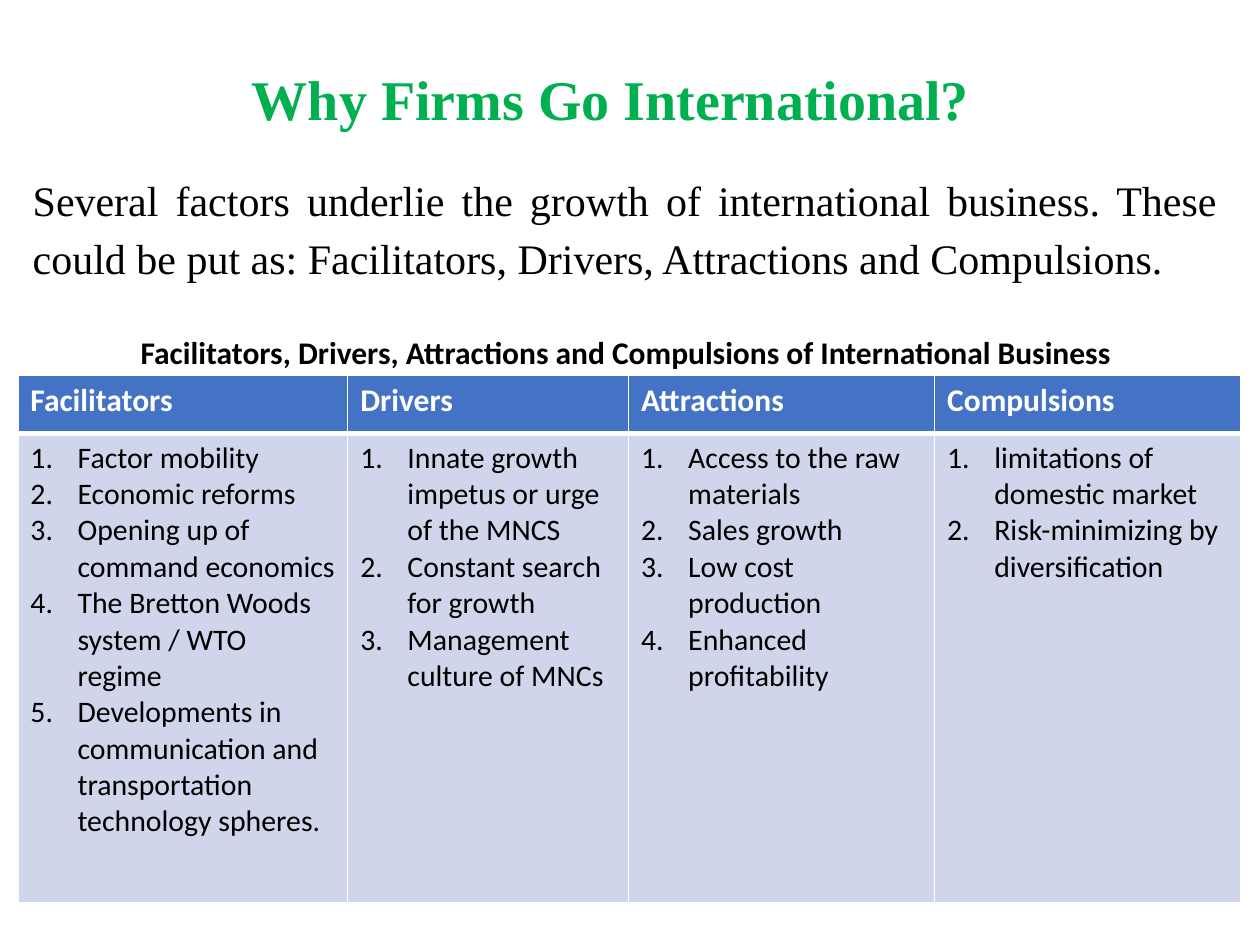
import pptx
import pptx.util
import pptx.dml.color
import pptx.enum.text
import pptx.oxml
import pptx.oxml.ns

Cm = pptx.util.Cm
Pt = pptx.util.Pt
ALIGN = pptx.enum.text.PP_ALIGN
SERIF = "Times New Roman"
SANS = "Calibri"
HUES = {
    "title": "00B050",
    "text": "000000",
    "head": "4472C4",
    "body": "CFD5EA",
    "white": "FFFFFF",
}
LISTS = {
    "Facilitators": [
        "Factor mobility",
        "Economic reforms",
        "Opening up of command economics",
        "The Bretton Woods system / WTO regime",
        "Developments in communication and transportation technology spheres.",
    ],
    "Drivers": [
        "Innate growth impetus or urge of the MNCS",
        "Constant search for growth",
        "Management culture of MNCs",
    ],
    "Attractions": [
        "Access to the raw materials",
        "Sales growth",
        "Low cost production",
        "Enhanced profitability",
    ],
    "Compulsions": [
        "limitations of domestic market",
        "Risk-minimizing by diversification",
    ],
}
WIDTHS = [6.65, 5.66, 6.17, 6.17]
ROWS = [1.17, 9.45]


def color(name):
    return pptx.dml.color.RGBColor.from_string(HUES[name])


def add_run(para, text, size, font, hue, bold=False):
    run = para.add_run()
    run.text = text
    run.font.size = Pt(size)
    run.font.name = font
    run.font.bold = bold
    run.font.color.rgb = color(hue)


def add_text(slide, box, text, size, font, hue, bold=False, align=ALIGN.LEFT, wrap=True):
    frame = slide.shapes.add_textbox(*map(Cm, box)).text_frame
    frame.word_wrap = wrap
    frame.auto_size = pptx.enum.text.MSO_AUTO_SIZE.SHAPE_TO_FIT_TEXT
    para = frame.paragraphs[0]
    para.alignment = align
    para.line_spacing = 1.15
    add_run(para, text, size, font, hue, bold)


def add_title(slide, box):
    add_text(slide, box, "Why Firms Go International?", 32, SERIF, "title", True, wrap=False)


def add_intro(slide, box):
    text = (
        "Several factors underlie the growth of international business. "
        "These could be put as: Facilitators, Drivers, Attractions and Compulsions."
    )
    add_text(slide, box, text, 24, SERIF, "text", align=ALIGN.JUSTIFY)


def add_label(slide, box):
    text = "Facilitators, Drivers, Attractions and Compulsions of International Business"
    add_text(slide, box, text, 18, SANS, "text", True, ALIGN.CENTER)


def number(para):
    props = para._p.get_or_add_pPr()
    props.set("marL", str(Cm(0.95)))
    props.set("indent", str(-Cm(0.95)))
    space = pptx.oxml.ns.nsdecls("a")
    props.append(pptx.oxml.parse_xml(f'<a:buFont {space} typeface="+mj-lt"/>'))
    props.append(pptx.oxml.parse_xml(f'<a:buAutoNum {space} type="arabicPeriod"/>'))


def style(cell, fill, edges):
    cell.fill.solid()
    cell.fill.fore_color.rgb = color(fill)
    props = cell._tc.get_or_add_tcPr()
    for spot, (side, width) in enumerate(edges.items()):
        line = pptx.oxml.parse_xml(
            f'<a:ln{side} {pptx.oxml.ns.nsdecls("a")} w="{Pt(width)}"><a:solidFill>'
            f'<a:srgbClr val="{HUES["white"]}"/></a:solidFill></a:ln{side}>'
        )
        props.insert(spot, line)


def add_grid(slide, box):
    grid = slide.shapes.add_table(len(ROWS), len(LISTS), *map(Cm, box)).table
    for row, high in zip(grid.rows, ROWS):
        row.height = Cm(high)
    for col, (name, items) in enumerate(LISTS.items()):
        grid.columns[col].width = Cm(WIDTHS[col])
        head, body = grid.cell(0, col), grid.cell(1, col)
        style(head, "head", {"L": 1, "R": 1, "T": 1, "B": 3})
        style(body, "body", {"L": 1, "R": 1, "T": 3, "B": 1})
        add_run(head.text_frame.paragraphs[0], name, 18, SANS, "white", True)
        frame = body.text_frame
        for spot, item in enumerate(items):
            para = frame.add_paragraph() if spot else frame.paragraphs[0]
            number(para)
            add_run(para, item, 17, SANS, "text")


def main():
    deck = pptx.Presentation()
    deck.slide_width, deck.slide_height = Cm(25.4), Cm(19.05)
    slide = deck.slides.add_slide(deck.slide_layouts[6])
    add_intro(slide, (0.41, 3.25, 24.38, 2.62))
    add_grid(slide, (0.36, 7.57, sum(WIDTHS), sum(ROWS)))
    add_title(slide, (4.83, 0.97, 15.11, 1.7))
    add_label(slide, (2.46, 6.48, 20.32, 1.09))
    deck.save("out.pptx")


if __name__ == "__main__":
    main()
